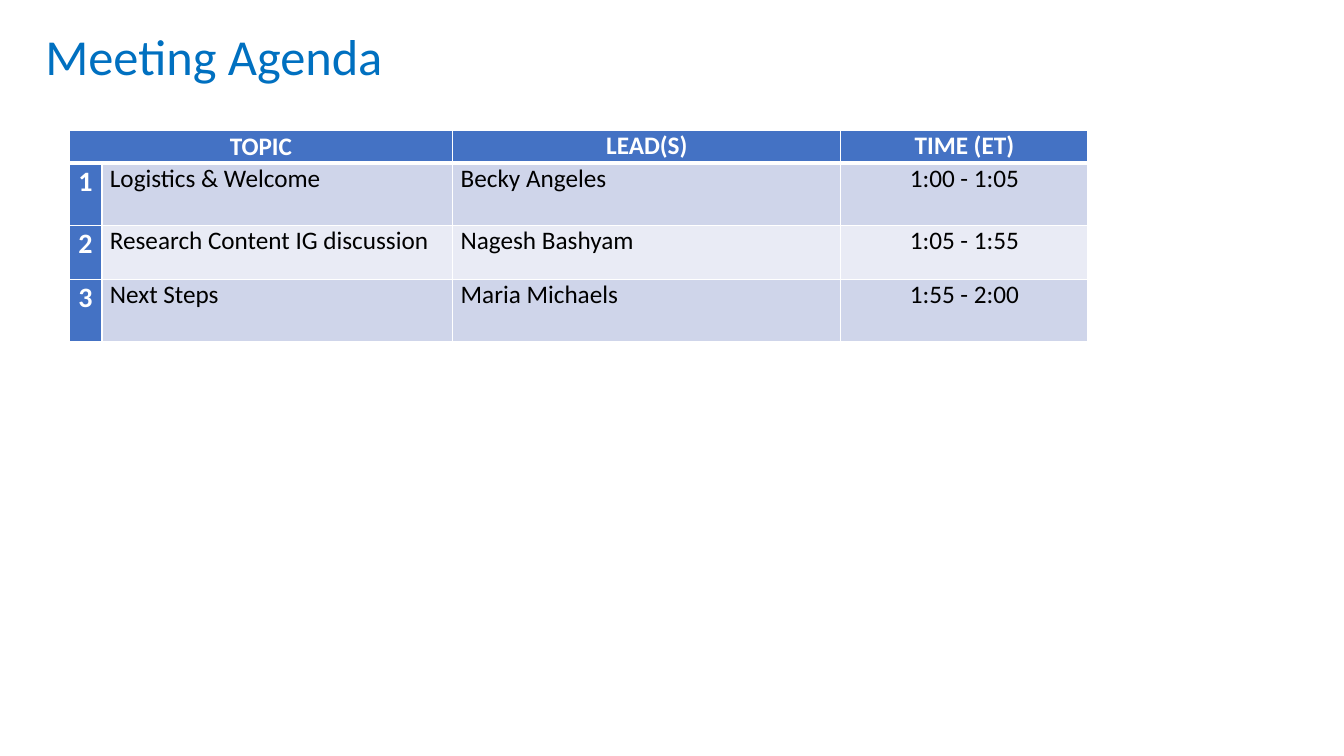
from lxml.etree import SubElement
from pptx import Presentation
from pptx.dml.color import RGBColor
from pptx.enum.text import MSO_ANCHOR as Anchor, MSO_AUTO_SIZE as AutoSize, PP_ALIGN as Align
from pptx.oxml.ns import qn
from pptx.util import Cm, Pt

BLUE, WHITE, BLACK = "4472C4", "FFFFFF", "000000"
BANDS = ("CFD5EA", "E9EBF5")
COLUMN_WIDTHS = (0.83, 8.84, 9.78, 6.23)
ROW_HEIGHTS = (0.83, 1.57, 1.36, 1.57)
HEADINGS = ("TOPIC", "", "LEAD(S)", "TIME (ET)")
AGENDA = (
    ("1", "Logistics & Welcome", "Becky Angeles", "1:00 - 1:05"),
    ("2", "Research Content IG discussion", "Nagesh Bashyam", "1:05 - 1:55"),
    ("3", "Next Steps", "Maria Michaels", "1:55 - 2:00"),
)


def color(value):
    """Turn a hex string into a colour."""
    return RGBColor.from_string(value)


def style_font(font, size, value, bold=False):
    """Set the typeface, size, colour and weight of a font."""
    font.name, font.size, font.bold = "Calibri", Pt(size), bold
    font.color.rgb = color(value)


def add_border(cell, side, width):
    """Draw one white cell border, with side given as L, R, T or B."""
    line = SubElement(cell._tc.get_or_add_tcPr(), qn(f"a:ln{side}"), w=str(Pt(width)))
    fill = SubElement(line, qn("a:solidFill"))
    SubElement(fill, qn("a:srgbClr"), val=WHITE)


def format_cell(cell, row, column, text):
    """Fill one agenda cell according to its row and column."""
    is_label = row == 0 or column == 0
    widths = {"L": 1, "R": 1, "T": 3 if row == 1 else 1, "B": 3 if row == 0 else 1}
    for side, width in widths.items():
        add_border(cell, side, width)
    cell.fill.solid()
    cell.fill.fore_color.rgb = color(BLUE if is_label else BANDS[(row - 1) % 2])
    cell.margin_left = cell.margin_right = Cm(0.03 if column == 0 else 0.2)
    cell.margin_top = cell.margin_bottom = Cm(0.03 if column == 0 else 0)
    cell.vertical_anchor = Anchor.TOP
    cell.text = text
    paragraph = cell.text_frame.paragraphs[0]
    paragraph.alignment = Align.CENTER if is_label or column == 3 else Align.LEFT
    size = 20 if column == 0 and row > 0 else 18
    style_font(paragraph.font, size, WHITE if is_label else BLACK, is_label)


def add_agenda(slide, left, top):
    """Place the agenda table with its top left corner at the given point."""
    rows = (HEADINGS, *AGENDA)
    table = slide.shapes.add_table(
        len(rows), len(HEADINGS), Cm(left), Cm(top),
        Cm(sum(COLUMN_WIDTHS)), Cm(sum(ROW_HEIGHTS))).table
    for column, width in zip(table.columns, COLUMN_WIDTHS):
        column.width = Cm(width)
    for row, height in zip(table.rows, ROW_HEIGHTS):
        row.height = Cm(height)
    for row, texts in enumerate(rows):
        for column, text in enumerate(texts):
            format_cell(table.cell(row, column), row, column, text)
    table.cell(0, 0).merge(table.cell(0, 1))


def set_title(slide, left, top, width, height):
    """Write the slide title in the given box."""
    title = slide.shapes.title
    title.left, title.top, title.width, title.height = map(Cm, (left, top, width, height))
    frame = title.text_frame
    frame.text = "Meeting Agenda"
    frame.auto_size = AutoSize.NONE
    frame.vertical_anchor = Anchor.TOP
    paragraph = frame.paragraphs[0]
    paragraph.alignment = Align.LEFT
    paragraph.line_spacing = 0.9
    style_font(paragraph.font, 36, "0070C0")


def main():
    """Build and save the agenda slide."""
    presentation = Presentation()
    presentation.slide_width, presentation.slide_height = Cm(33.87), Cm(19.05)
    slide = presentation.slides.add_slide(presentation.slide_layouts[5])
    add_agenda(slide, 1.74, 3.28)
    set_title(slide, 0.89, 0.69, 30.3, 2)
    presentation.save("out.pptx")


if __name__ == "__main__":
    main()
